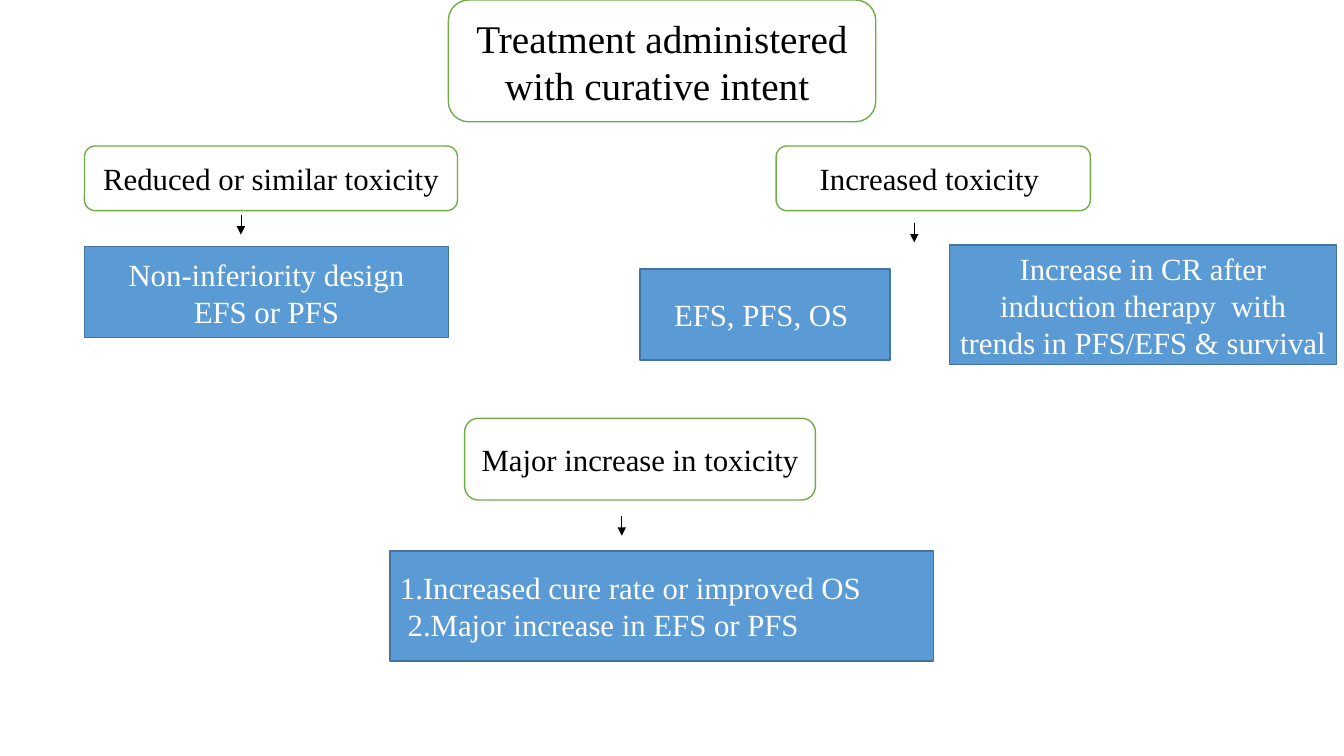
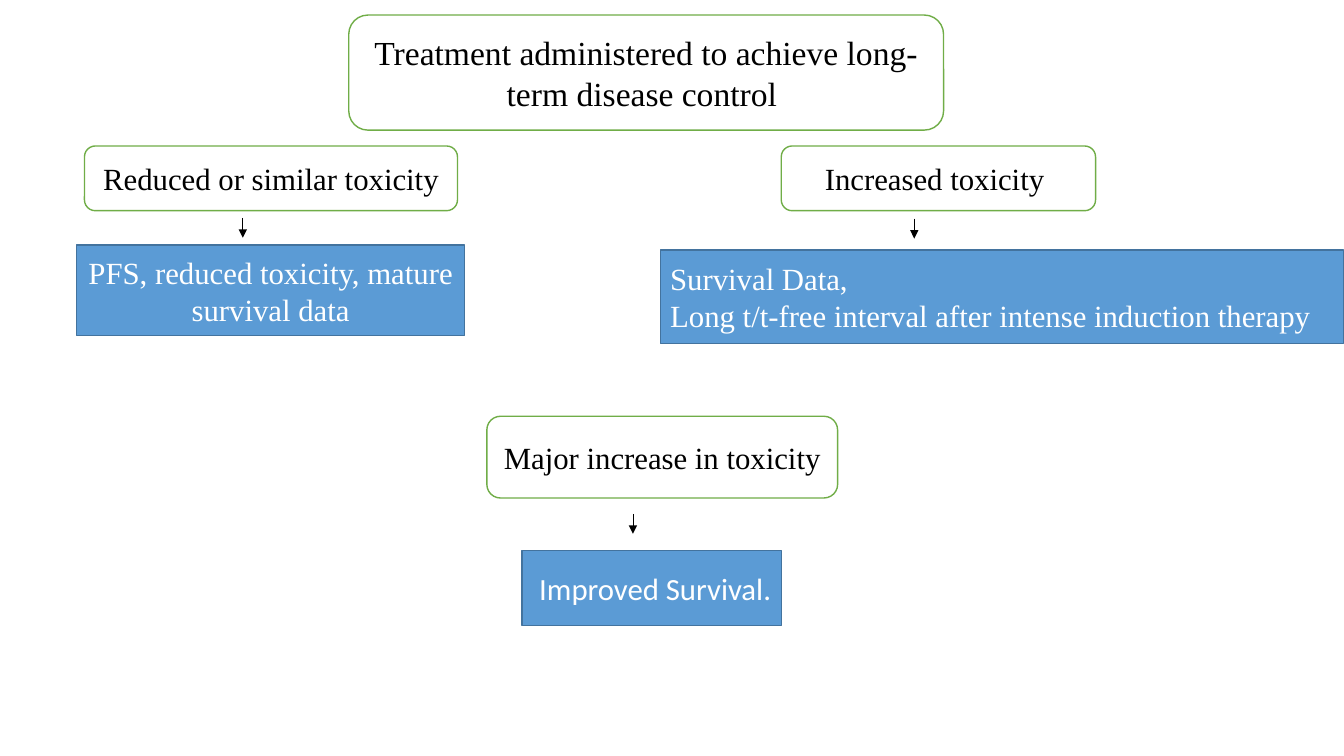
"""Build two flow slides that match treatment toxicity with suitable endpoints."""

import dataclasses

import lxml.etree
import pptx
import pptx.dml.color
import pptx.enum.shapes
import pptx.enum.text
import pptx.oxml.ns
import pptx.slide
import pptx.util

Cm = pptx.util.Cm
Pt = pptx.util.Pt
RGBColor = pptx.dml.color.RGBColor
Shape = pptx.enum.shapes.MSO_SHAPE
Align = pptx.enum.text.PP_ALIGN
qn = pptx.oxml.ns.qn

WHITE = RGBColor(0xFF, 0xFF, 0xFF)
BLACK = RGBColor(0x00, 0x00, 0x00)
GREEN = RGBColor(0x70, 0xAD, 0x47)
BLUE = RGBColor(0x5B, 0x9B, 0xD5)
DARK_BLUE = RGBColor(0x43, 0x73, 0x9E)

SERIF = "Times New Roman"
BODY_SIZE = 22
ARROW_LENGTH = 0.5
TOXICITY_TOP = 3.68
TOXICITY_HEIGHT = 1.63


@dataclasses.dataclass(frozen=True)
class Style:
    fill: RGBColor
    line: RGBColor
    text: RGBColor


HEADING = Style(WHITE, GREEN, BLACK)
ENDPOINT = Style(BLUE, DARK_BLUE, WHITE)


@dataclasses.dataclass(frozen=True)
class Box:
    text: str
    left: float
    top: float
    width: float
    height: float
    style: Style = ENDPOINT
    shape: Shape = Shape.RECTANGLE
    size: int = BODY_SIZE
    font: str = SERIF
    align: Align = Align.CENTER


@dataclasses.dataclass(frozen=True)
class Arrow:
    x: float
    top: float


def heading(text: str, left: float, top: float, width: float, height: float,
            size: int = BODY_SIZE) -> Box:
    """Return a rounded, green-edged box."""
    return Box(text, left, top, width, height, HEADING,
               Shape.FLOWCHART_ALTERNATE_PROCESS, size)


def toxicity_headings(increased_left: float, major_left: float,
                      major_top: float) -> list[Box]:
    """Return the three toxicity headings of a slide."""
    return [
        heading("Reduced or similar toxicity", 2.13, TOXICITY_TOP, 9.4, TOXICITY_HEIGHT),
        heading("Increased toxicity ", increased_left, TOXICITY_TOP, 7.92, TOXICITY_HEIGHT),
        heading("Major increase in toxicity", major_left, major_top, 8.84, 2.06),
    ]


SLIDES: list[tuple[list[Box], list[Arrow]]] = [
    (
        [
            heading("Treatment administered with curative intent ",
                    11.3, 0, 10.77, 3.07, size=28),
            *toxicity_headings(19.56, 11.71, 10.54),
            Box("Non-inferiority design\nEFS or PFS", 2.13, 6.22, 9.17, 2.29),
            Box("EFS, PFS, OS ", 16.13, 6.78, 6.3, 2.29),
            Box("Increase in CR after induction therapy  with trends in PFS/EFS & survival",
                23.93, 6.17, 9.75, 3.02, shape=Shape.FLOWCHART_PROCESS),
            Box("1.Increased cure rate or improved OS\n 2.Major increase in EFS or PFS",
                9.83, 13.89, 13.69, 2.77, align=Align.LEFT),
        ],
        [Arrow(6.07, 5.41), Arrow(15.67, 13), Arrow(23.04, 5.61)],
    ),
    (
        [
            heading("Treatment administered to achieve long-term disease control ",
                    8.79, 0.38, 14.99, 2.9, size=24),
            *toxicity_headings(19.69, 12.27, 10.49),
            Box("PFS, reduced toxicity, mature survival data", 1.93, 6.17, 9.78, 2.29),
            Box("Survival Data,\nLong t/t-free interval after intense induction therapy",
                16.64, 6.3, 17.22, 2.36, align=Align.LEFT),
            Box(" Improved Survival.", 13.16, 13.87, 6.53, 1.9, font="Calibri"),
        ],
        [Arrow(6.12, 5.49), Arrow(15.95, 12.95), Arrow(23.04, 5.51)],
    ),
]


def draw_box(s: pptx.slide.Slide, box: Box) -> None:
    """Draw one box with its text."""
    sp = s.shapes.add_shape(box.shape, Cm(box.left), Cm(box.top),
                            Cm(box.width), Cm(box.height))
    sp.shadow.inherit = False
    sp.fill.solid()
    sp.fill.fore_color.rgb = box.style.fill
    sp.line.color.rgb = box.style.line
    sp.line.width = Pt(1)
    tf = sp.text_frame
    tf.word_wrap = True
    tf.vertical_anchor = pptx.enum.text.MSO_ANCHOR.MIDDLE
    tf.text = box.text
    for p in tf.paragraphs:
        p.alignment = box.align
        p.font.name = box.font
        p.font.size = Pt(box.size)
        p.font.color.rgb = box.style.text


def draw_arrow(s: pptx.slide.Slide, arrow: Arrow) -> None:
    """Draw one short downward arrow."""
    x = Cm(arrow.x)
    sp = s.shapes.add_connector(pptx.enum.shapes.MSO_CONNECTOR.STRAIGHT, x, Cm(arrow.top),
                                x, Cm(arrow.top + ARROW_LENGTH))
    sp.line.color.rgb = BLACK
    sp.line.width = Pt(0.5)
    properties = sp._element.spPr
    lxml.etree.SubElement(properties.find(qn("a:ln")), qn("a:tailEnd"), type="triangle")
    lxml.etree.SubElement(properties, qn("a:effectLst"))


def main() -> None:
    """Build and save the presentation."""
    prs = pptx.Presentation()
    prs.slide_width = Cm(33.87)
    prs.slide_height = Cm(19.05)
    for boxes, arrows in SLIDES:
        s = prs.slides.add_slide(prs.slide_layouts[6])
        for box in boxes:
            draw_box(s, box)
        for arrow in arrows:
            draw_arrow(s, arrow)
    prs.save("out.pptx")


if __name__ == "__main__":
    main()
